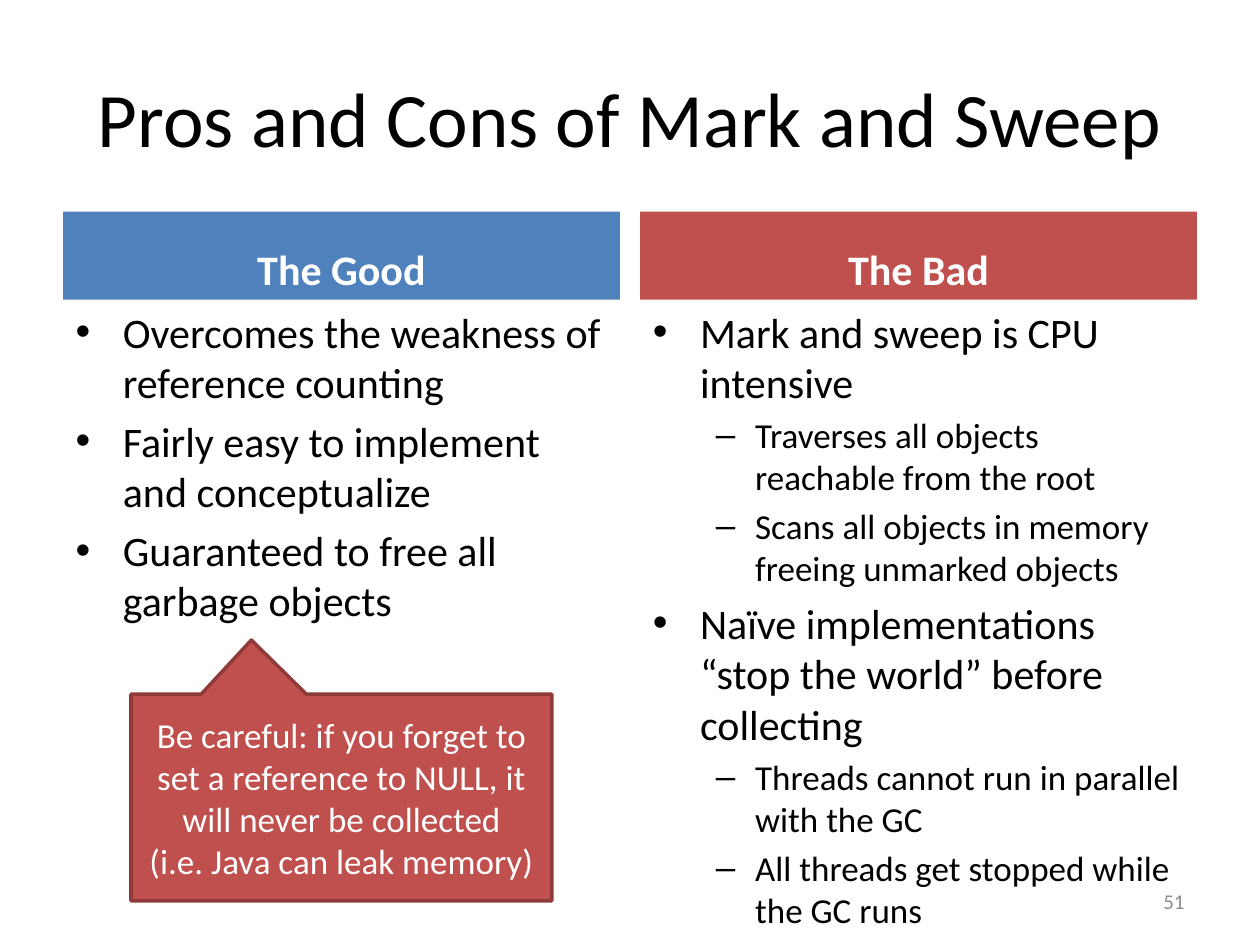
from dataclasses import dataclass

from pptx import Presentation
from pptx.dml.color import RGBColor
from pptx.enum.shapes import MSO_SHAPE
from pptx.enum.text import MSO_ANCHOR, MSO_AUTO_SIZE, PP_ALIGN
from pptx.util import Pt

CALLOUT = MSO_SHAPE.RECTANGULAR_CALLOUT
LEFT, CENTER, RIGHT = PP_ALIGN.LEFT, PP_ALIGN.CENTER, PP_ALIGN.RIGHT
TOP, MIDDLE, BOTTOM = MSO_ANCHOR.TOP, MSO_ANCHOR.MIDDLE, MSO_ANCHOR.BOTTOM
NO_FIT = MSO_AUTO_SIZE.NONE
COMPARISON_LAYOUT = 4


@dataclass(frozen=True)
class Theme:
    font: str = "Calibri"
    ink: str = "000000"
    light: str = "FFFFFF"
    muted: str = "8C8C8C"
    good: str = "4F81BD"
    bad: str = "C0504D"
    bad_edge: str = "8E3B39"
    title_size: int = 44
    level_sizes: tuple = (24, 20)
    callout_size: int = 20
    number_size: int = 12


def rgb(value):
    return RGBColor.from_string(value)


def write(tf, items, *, font, sizes, color, bold=False, align=LEFT, anchor=TOP):
    """Fill a text frame with (level, text) items; sizes are indexed by level."""
    tf.word_wrap = True
    tf.auto_size = NO_FIT
    tf.vertical_anchor = anchor
    for i, (level, text) in enumerate(items):
        p = tf.add_paragraph() if i else tf.paragraphs[0]
        p.level = level
        p.alignment = align
        r = p.add_run()
        r.text = text
        r.font.name = font
        r.font.size = Pt(sizes[level])
        r.font.bold = bold
        r.font.color.rgb = rgb(color)


class SlideBuilder:
    """Holds the theme and the slide being filled."""

    def __init__(self, s, theme):
        self.s = s
        self.theme = theme

    def placeholder(self, idx, box):
        sp = next(ph for ph in self.s.placeholders
                  if ph.placeholder_format.idx == idx)
        sp.left, sp.top, sp.width, sp.height = map(Pt, box)
        return sp

    def title(self, text, box):
        t = self.theme
        write(self.placeholder(0, box).text_frame, [(0, text)], font=t.font,
              sizes=[t.title_size], color=t.ink, align=CENTER, anchor=MIDDLE)

    def heading(self, idx, text, box, fill):
        t = self.theme
        sp = self.placeholder(idx, box)
        sp.fill.solid()
        sp.fill.fore_color.rgb = rgb(fill)
        write(sp.text_frame, [(0, text)], font=t.font, sizes=t.level_sizes,
              color=t.light, bold=True, align=CENTER, anchor=BOTTOM)

    def bullets(self, idx, items, box):
        t = self.theme
        write(self.placeholder(idx, box).text_frame, items, font=t.font,
              sizes=t.level_sizes, color=t.ink)

    def callout(self, lines, box, tip):
        """Tip is the pointer's offset from the centre, as shares of the size."""
        t = self.theme
        sp = self.s.shapes.add_shape(CALLOUT, *map(Pt, box))
        sp.shadow.inherit = False
        sp.adjustments[0], sp.adjustments[1] = tip
        sp.fill.solid()
        sp.fill.fore_color.rgb = rgb(t.bad)
        sp.line.color.rgb = rgb(t.bad_edge)
        sp.line.width = Pt(2)
        write(sp.text_frame, [(0, line) for line in lines], font=t.font,
              sizes=[t.callout_size], color=t.light, align=CENTER, anchor=MIDDLE)

    def number(self, text, box):
        t = self.theme
        sp = self.s.shapes.add_textbox(*map(Pt, box))
        write(sp.text_frame, [(0, text)], font=t.font, sizes=[t.number_size],
              color=t.muted, align=RIGHT, anchor=MIDDLE)


GOOD = [
    (0, "Overcomes the weakness of reference counting"),
    (0, "Fairly easy to implement and conceptualize"),
    (0, "Guaranteed to free all garbage objects"),
]
BAD = [
    (0, "Mark and sweep is CPU intensive"),
    (1, "Traverses all objects reachable from the root"),
    (1, "Scans all objects in memory freeing unmarked objects"),
    (0, "Naïve implementations “stop the world” before collecting"),
    (1, "Threads cannot run in parallel with the GC"),
    (1, "All threads get stopped while the GC runs"),
]
WARNING = [
    "Be careful: if you forget to set a reference to NULL, it will never be collected",
    "(i.e. Java can leak memory)",
]


def main():
    prs = Presentation()
    prs.slide_width, prs.slide_height = Pt(720), Pt(540)
    theme = Theme()
    s = prs.slides.add_slide(prs.slide_layouts[COMPARISON_LAYOUT])
    slide = SlideBuilder(s, theme)

    margin, col_w = 36, 318.2
    head_top, head_h = 120.9, 50.4
    slide.title("Pros and Cons of Mark and Sweep", (margin, 21.6, 648, 90))
    columns = [
        (margin, "The Good", theme.good, GOOD, 311),
        (720 - margin - col_w, "The Bad", theme.bad, BAD, 358),
    ]
    for i, (x, name, fill, items, list_h) in enumerate(columns):
        slide.heading(2 * i + 1, name, (x, head_top, col_w, head_h), fill)
        slide.bullets(2 * i + 2, items, (x, head_top + head_h, col_w, list_h))

    slide.number("51", (516, 500.5, 168, 28.75))
    slide.callout(WARNING, (74.9, 396.7, 240.5, 118.1), (-0.214, -0.762))
    prs.save("out.pptx")


if __name__ == "__main__":
    main()
